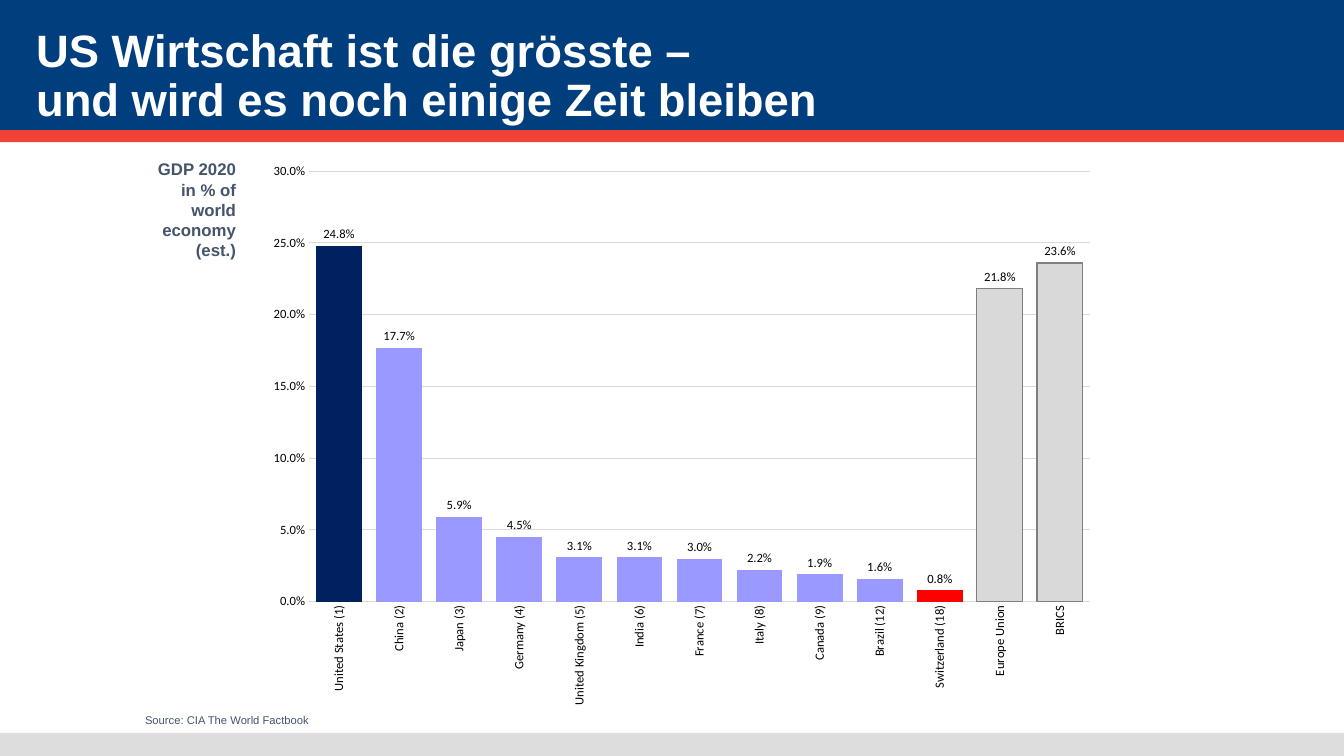
"""Build a slide comparing shares of world GDP in 2020."""
from lxml import etree
from pptx import Presentation
from pptx.chart.data import CategoryChartData
from pptx.dml.color import RGBColor
from pptx.enum import chart as ch, shapes, text
from pptx.oxml import parse_xml
from pptx.oxml.ns import nsdecls
from pptx.util import Inches, Pt


def color(hex_code):
    return RGBColor.from_string(hex_code)


def add_text(box, lines, size, hex_code, bold=False, align=None, spacing=None, wrap=True):
    left, top, width, height = map(Inches, box)
    frame = slide.shapes.add_textbox(left, top, width, height).text_frame
    frame.word_wrap = wrap
    frame.text = "\n".join(lines)
    for paragraph in frame.paragraphs:
        paragraph.alignment = align
        paragraph.line_spacing = spacing
        paragraph.font.name = "Arial"
        paragraph.font.size = Pt(size)
        paragraph.font.bold = bold
        paragraph.font.color.rgb = color(hex_code)
    return frame


deck = Presentation()
deck.slide_width, deck.slide_height = Inches(13.33), Inches(7.5)
slide = deck.slides.add_slide(deck.slide_layouts[6])

for top, height, band_color in [(7.27, 0.23, "DDDDDD"), (-0.01, 1.31, "003E7E"), (1.29, 0.12, "EF4135")]:
    band = slide.shapes.add_shape(
        shapes.MSO_SHAPE.RECTANGLE, 0, Inches(top), Inches(13.33), Inches(height))
    band.shadow.inherit = False
    band.fill.solid()
    band.fill.fore_color.rgb = color(band_color)
    band.line.fill.background()

title = add_text((0.26, 0.24, 10.41, 1.06),
                 ["US Wirtschaft ist die grösste –\vund wird es noch einige Zeit bleiben"],
                 32.4, "FFFFFF", bold=True, spacing=0.9)
title.vertical_anchor = text.MSO_ANCHOR.MIDDLE
add_text((1.46, 1.53, 0.98, 1.11), ["GDP 2020", "in % of\vworld\veconomy", "(est.)"],
         12, "44546A", bold=True, align=text.PP_ALIGN.RIGHT, wrap=False)
add_text((1.34, 7.04, 4.7, 0.22), ["Source: CIA The World Factbook"], 8, "44546A", spacing=0.9)

gdp_shares = {
    "United States (1)": 0.248, "China (2)": 0.177, "Japan (3)": 0.059,
    "Germany (4)": 0.045, "United Kingdom (5)": 0.031, "India (6)": 0.031,
    "France (7)": 0.03, "Italy (8)": 0.022, "Canada (9)": 0.019,
    "Brazil (12)": 0.016, "Switzerland (18)": 0.008,
    "Europe Union": 0.218, "BRICS": 0.236,
}
highlights = {"United States (1)": "002060", "Switzerland (18)": "FF0000",
              "Europe Union": "D9D9D9", "BRICS": "D9D9D9"}
blocs = ("Europe Union", "BRICS")

gdp_data = CategoryChartData(number_format="0.0%")
gdp_data.categories = list(gdp_shares)
gdp_data.add_series("Series 1", list(gdp_shares.values()))
gdp_chart = slide.shapes.add_chart(
    ch.XL_CHART_TYPE.COLUMN_CLUSTERED,
    Inches(2.56), Inches(1.53), Inches(8.42), Inches(5.62), gdp_data).chart
gdp_chart.has_legend = False
gdp_chart.has_title = False
gdp_chart.font.name = "Calibri"
gdp_chart.font.size = Pt(10)
gdp_chart.font.color.rgb = color("000000")

countries, shares = gdp_chart.category_axis, gdp_chart.value_axis
for axis in (countries, shares):
    axis.major_tick_mark = axis.minor_tick_mark = ch.XL_TICK_MARK.NONE
    axis.tick_labels.font.name = "Calibri"
    axis.tick_labels.font.size = Pt(9)
    axis.tick_labels.font.color.rgb = color("000000")
countries.tick_labels.font._element.getparent().getparent().getparent().bodyPr.set("rot", "-5400000")
shares.minimum_scale, shares.maximum_scale, shares.major_unit = 0, 0.3, 0.05
shares.tick_labels.number_format = "0.0%"
shares.tick_labels.number_format_is_linked = False
shares.format.line.fill.background()
for line in (countries.format.line, shares.major_gridlines.format.line):
    line.color.rgb = color("D9D9D9")
    line.width = Pt(0.75)

plot = gdp_chart.plots[0]
plot.vary_by_categories = False
plot.gap_width, plot.overlap = 31, 100
plot.has_data_labels = True
labels = plot.data_labels
labels.show_value = True
labels.position = ch.XL_LABEL_POSITION.OUTSIDE_END
labels.number_format, labels.number_format_is_linked = "0.0%", False
labels.font.name = "Calibri"
labels.font.size = Pt(9)
labels.font.color.rgb = color("000000")

bars = plot.series[0]
bars.invert_if_negative = False
bars.format.fill.solid()
bars.format.fill.fore_color.rgb = color("9999FF")
for index, country in enumerate(gdp_shares):
    if country in highlights:
        bar = bars.points[index].format
        bar.fill.solid()
        bar.fill.fore_color.rgb = color(highlights[country])
        if country in blocs:
            bar.line.color.rgb = color("7F7F7F")
            bar.line.width = Pt(0.75)

plot_area = gdp_chart._chartSpace.chart.plotArea
for automatic in plot_area.findall("{*}layout"):
    plot_area.remove(automatic)
layout = parse_xml(
    f'<c:layout {nsdecls("c")}><c:manualLayout><c:layoutTarget val="inner"/>'
    '<c:xMode val="edge"/><c:yMode val="edge"/></c:manualLayout></c:layout>')
for side, fraction in [("x", 0.06), ("y", 0.03), ("w", 0.92), ("h", 0.76)]:
    etree.SubElement(layout[0], layout.tag.replace("layout", side)).set("val", str(fraction))
plot_area.insert(0, layout)

deck.save("out.pptx")
